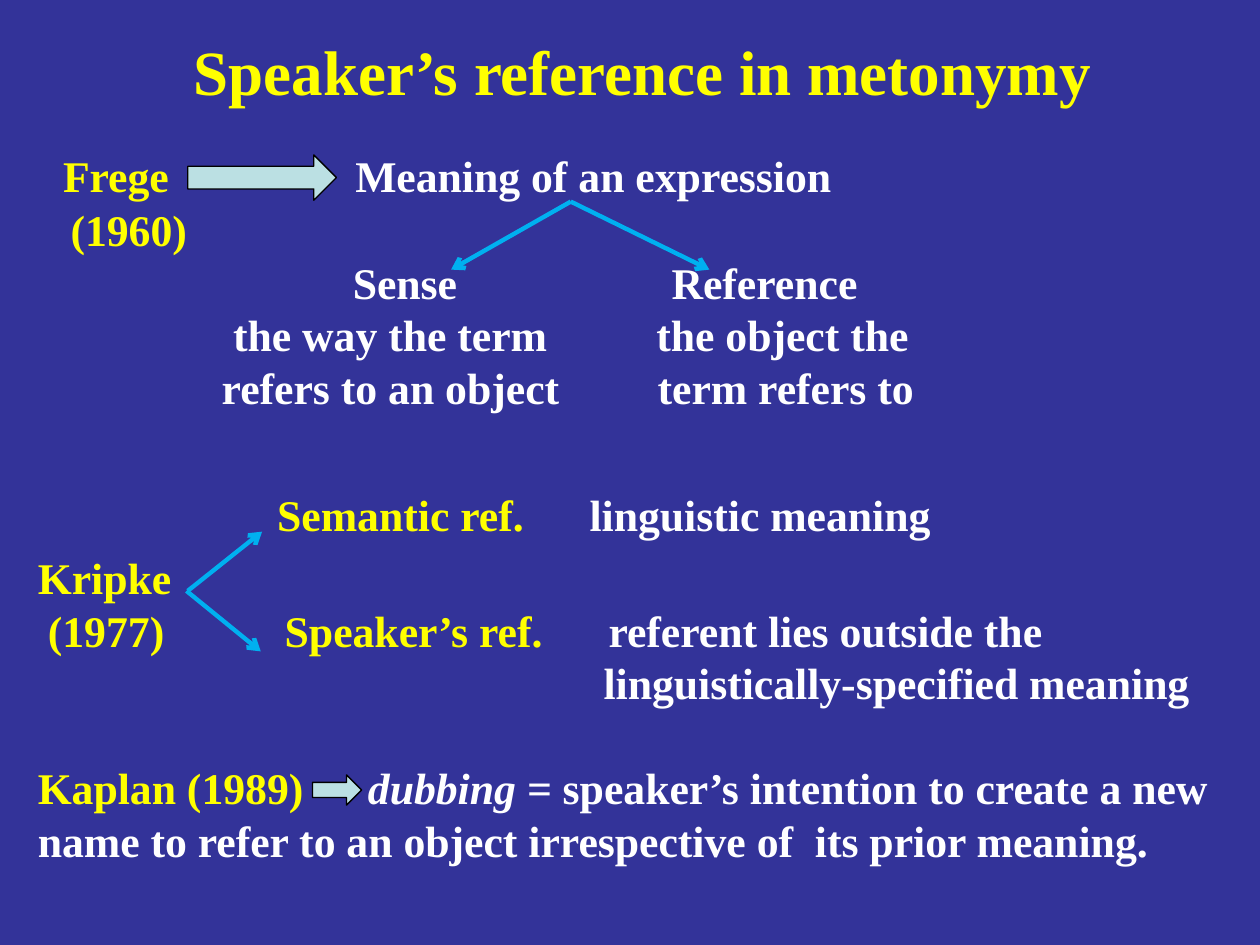
"""Build a slide on speaker's reference in metonymy."""
from dataclasses import dataclass

from lxml import etree
from pptx import Presentation
from pptx.dml.color import RGBColor
from pptx.enum.shapes import MSO_CONNECTOR, MSO_SHAPE
from pptx.enum.text import MSO_ANCHOR, MSO_AUTO_SIZE, PP_ALIGN
from pptx.oxml.ns import qn
from pptx.util import Inches, Pt

RIGHT_ARROW = MSO_SHAPE.RIGHT_ARROW
STRAIGHT = MSO_CONNECTOR.STRAIGHT
TOP, MIDDLE = MSO_ANCHOR.TOP, MSO_ANCHOR.MIDDLE
NO_AUTOFIT = MSO_AUTO_SIZE.NONE
LEFT, CENTER = PP_ALIGN.LEFT, PP_ALIGN.CENTER

NAVY = RGBColor(0x33, 0x33, 0x99)
YELLOW = RGBColor(0xFF, 0xFF, 0x00)
WHITE = RGBColor(0xFF, 0xFF, 0xFF)
BLACK = RGBColor(0x00, 0x00, 0x00)
PALE_BLUE = RGBColor(0xBB, 0xE0, 0xE3)
SKY = RGBColor(0x00, 0xB0, 0xF0)
FONT = "Times New Roman"
TITLE_SIZE, BODY_SIZE, LINE_PITCH = Pt(36), Pt(25), Pt(30)
BODY_LEFT, BODY_TOP, LABEL_WIDTH = 0.3, 1.18, 4


@dataclass(frozen=True)
class Span:
    text: str
    color: RGBColor = WHITE
    italic: bool = False


@dataclass(frozen=True)
class Label:
    left: float
    span: Span


@dataclass(frozen=True)
class Line:
    spans: tuple[Span, ...]
    margin: float = 0
    first_indent: float = 0
    before: float = 0
    labels: tuple[Label, ...] = ()


@dataclass(frozen=True)
class Branch:
    start: tuple[float, float]
    end: tuple[float, float]


@dataclass(frozen=True)
class BlockArrow:
    left: float
    top: float
    width: float
    height: float


LINES = (
    Line((Span("Frege", YELLOW),), 0.2,
         labels=(Label(2.52, Span("Meaning of an expression")),)),
    Line((Span("(1960)", YELLOW),), 0.26, before=1),
    Line((Span("Sense"),), 2.5, labels=(Label(5.03, Span("Reference")),)),
    Line((Span("the way the term"),), 1.55, labels=(Label(4.91, Span("the object the")),)),
    Line((Span("refers to an object"),), 1.46, labels=(Label(4.92, Span("term refers to")),)),
    Line((Span("Semantic ref.", YELLOW),), 1.9, before=43,
         labels=(Label(4.38, Span("linguistic meaning")),)),
    Line((Span("Kripke", YELLOW),), before=6),
    Line((Span("(1977)", YELLOW),), 0.08,
         labels=(Label(1.96, Span("Speaker’s ref.", YELLOW)),
                 Label(4.53, Span("referent lies outside the")))),
    Line((Span("linguistically-specified meaning"),), 4.49),
    Line((Span("dubbing = ", italic=True),
          Span("speaker’s intention to create a new name to refer to an object "
               "irrespective of  its prior meaning.")), first_indent=2.62, before=30,
         labels=(Label(0, Span("Kaplan (1989)", YELLOW)),)),
)
BRANCHES = (
    Branch((4.53, 1.6), (5.63, 2.14)),
    Branch((4.53, 1.6), (3.58, 2.14)),
    Branch((1.49, 4.69), (2.08, 4.22)),
    Branch((1.48, 4.69), (2.07, 5.17)),
)
BLOCK_ARROWS = (BlockArrow(1.49, 1.23, 1.18, 0.36), BlockArrow(2.48, 6.15, 0.39, 0.24))


def place(holder, left: float, top: float, width: float, height: float, anchor) -> None:
    holder.left, holder.top = Inches(left), Inches(top)
    holder.width, holder.height = Inches(width), Inches(height)
    frame = holder.text_frame
    frame.margin_left = frame.margin_right = frame.margin_top = frame.margin_bottom = 0
    frame.word_wrap = True
    frame.auto_size = NO_AUTOFIT
    frame.vertical_anchor = anchor


def add_span(paragraph, span: Span, size: Pt) -> None:
    run = paragraph.add_run()
    run.text = span.text
    run.font.name, run.font.size = FONT, size
    run.font.bold, run.font.italic = True, span.italic
    run.font.color.rgb = span.color


def write_line(paragraph, line: Line) -> None:
    paragraph.alignment = LEFT
    paragraph.line_spacing = LINE_PITCH
    paragraph.space_before, paragraph.space_after = Pt(line.before), Pt(0)
    properties = paragraph._p.get_or_add_pPr()
    properties.set("marL", str(Inches(line.margin)))
    properties.set("indent", str(Inches(line.first_indent)))
    etree.SubElement(properties, qn("a:buNone"))
    for span in line.spans:
        add_span(paragraph, span, BODY_SIZE)


def draw_label(slide, label: Label, top: float) -> None:
    box = slide.shapes.add_textbox(0, 0, 0, 0)
    place(box, BODY_LEFT + label.left, top, LABEL_WIDTH, LINE_PITCH.inches, TOP)
    write_line(box.text_frame.paragraphs[0], Line((label.span,)))


def draw_branch(slide, branch: Branch) -> None:
    connector = slide.shapes.add_connector(
        STRAIGHT, *map(Inches, branch.start), *map(Inches, branch.end))
    connector.line.color.rgb = SKY
    connector.line.width = Pt(2.5)
    etree.SubElement(connector.line._get_or_add_ln(), qn("a:tailEnd"), type="arrow")
    etree.SubElement(connector._element.spPr, qn("a:effectLst"))


def draw_block_arrow(slide, arrow: BlockArrow) -> None:
    shape = slide.shapes.add_shape(
        RIGHT_ARROW, *map(Inches, (arrow.left, arrow.top, arrow.width, arrow.height)))
    shape.shadow.inherit = False
    shape.fill.solid()
    shape.fill.fore_color.rgb = PALE_BLUE
    shape.line.color.rgb = BLACK
    shape.line.width = Pt(0.75)


def main() -> None:
    deck = Presentation()
    deck.slide_width, deck.slide_height = Inches(10), Inches(7.5)
    slide = deck.slides.add_slide(deck.slide_layouts[1])
    slide.background.fill.solid()
    slide.background.fill.fore_color.rgb = NAVY

    title, body = slide.shapes.title, slide.placeholders[1]
    place(title, 0.2, 0.27, 9.8, 0.57, MIDDLE)
    heading = title.text_frame.paragraphs[0]
    heading.alignment = CENTER
    add_span(heading, Span("Speaker’s reference in metonymy", YELLOW), TITLE_SIZE)

    place(body, BODY_LEFT, BODY_TOP, 9.6, 5.81, TOP)
    frame = body.text_frame
    line_top = BODY_TOP
    for index, line in enumerate(LINES):
        write_line(frame.add_paragraph() if index else frame.paragraphs[0], line)
        line_top += Pt(line.before).inches
        for label in line.labels:
            draw_label(slide, label, line_top)
        line_top += LINE_PITCH.inches

    for branch in BRANCHES:
        draw_branch(slide, branch)
    for arrow in BLOCK_ARROWS:
        draw_block_arrow(slide, arrow)
    deck.save("out.pptx")


if __name__ == "__main__":
    main()
